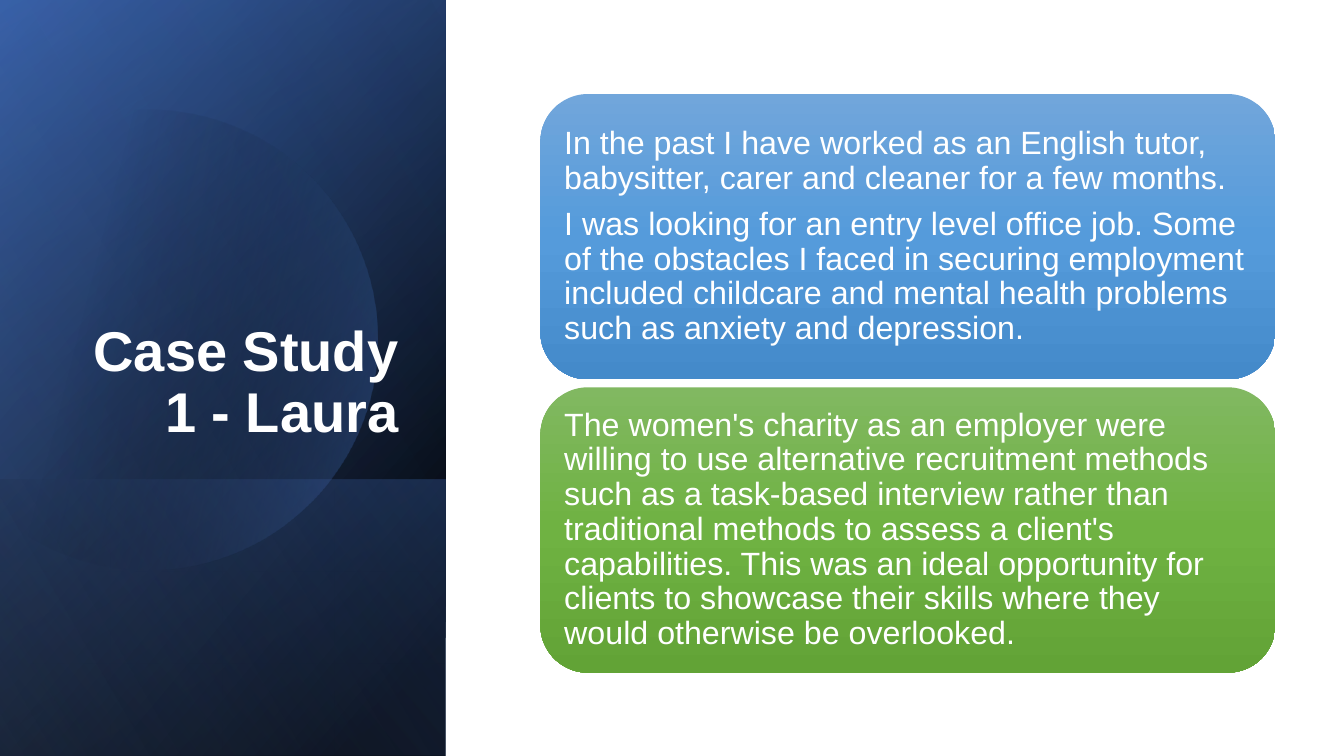
from math import cos, radians, sin

from lxml import etree
from pptx import Presentation
from pptx.dml.color import RGBColor
from pptx.enum.shapes import MSO_SHAPE
from pptx.enum.text import MSO_ANCHOR, MSO_AUTO_SIZE, PP_ALIGN
from pptx.oxml.ns import qn
from pptx.util import Cm, Pt

RECTANGLE = MSO_SHAPE.RECTANGLE
ROUNDED_RECTANGLE = MSO_SHAPE.ROUNDED_RECTANGLE
ANCHOR_BOTTOM, ANCHOR_MIDDLE = MSO_ANCHOR.BOTTOM, MSO_ANCHOR.MIDDLE
NO_AUTOFIT = MSO_AUTO_SIZE.NONE
ALIGN_LEFT, ALIGN_RIGHT = PP_ALIGN.LEFT, PP_ALIGN.RIGHT
TITLE_ONLY = 5

FONT = "Arial"
WHITE, BLACK = "FFFFFF", "000000"
BLUE, DARK_BLUE, PALE_BLUE = "4472C4", "2F5597", "8FAADC"

CARDS = [
    (["71A6DB", "559BDB", "448ACA"], [
        "In the past I have worked as an English tutor, babysitter, carer and cleaner "
        "for a few months.",
        "I was looking for an entry level office job. Some of the obstacles I faced in "
        "securing employment included childcare and mental health problems such as "
        "anxiety and depression.",
    ]),
    (["81B861", "6FB242", "62A336"], [
        "The women's charity as an employer were willing to use alternative recruitment "
        "methods such as a task-based interview rather than traditional methods to "
        "assess a client's capabilities. This was an ideal opportunity for clients to "
        "showcase their skills where they would otherwise be overlooked.",
    ]),
]


def color(value):
    """Turn a hex string into a colour."""
    return RGBColor.from_string(value)


def fill_gradient(shape, stops, angle):
    """Fill an unlined shape from (position, colour, opacity) stops in percent."""
    shape.shadow.inherit = False
    shape.line.fill.background()
    properties = shape.element.spPr
    gradient = etree.Element(qn("a:gradFill"), rotWithShape="1")
    stop_list = etree.SubElement(gradient, qn("a:gsLst"))
    for position, value, opacity in stops:
        stop = etree.SubElement(stop_list, qn("a:gs"), pos=str(position * 1000))
        stop_color = etree.SubElement(stop, qn("a:srgbClr"), val=value)
        if opacity < 100:
            etree.SubElement(stop_color, qn("a:alpha"), val=str(opacity * 1000))
    etree.SubElement(gradient, qn("a:lin"), ang=str(angle * 60000), scaled="0")
    properties.find(qn("a:ln")).addprevious(gradient)


def add_text(paragraph, text, size, alignment, bold=False):
    """Write one white run into a paragraph."""
    paragraph.alignment = alignment
    paragraph.line_spacing = 0.9
    run = paragraph.add_run()
    run.text = text
    run.font.name = FONT
    run.font.size = Pt(size)
    run.font.bold = bold
    run.font.color.rgb = color(WHITE)


def add_panel_layer(slide, left, top, width, height, stops, angle):
    """Cover a box with a mirrored rectangle turned by a quarter."""
    layer = slide.shapes.add_shape(
        RECTANGLE, Cm(left + (width - height) / 2), Cm(top + (height - width) / 2),
        Cm(height), Cm(width))
    layer.rotation = 90
    layer.element.spPr.find(qn("a:xfrm")).set("flipH", "1")
    fill_gradient(layer, stops, angle)


def add_cut_circle(slide, center_x, center_y, radius):
    """Draw a circle whose left side is cut off at the slide edge."""
    points = [(Cm(center_x + radius * cos(radians(degree))),
               Cm(center_y + radius * sin(radians(degree))))
              for degree in range(-135, 136, 3)]
    builder = slide.shapes.build_freeform(*points[0])
    builder.add_line_segments(points[1:], close=True)
    fill_gradient(builder.convert_to_shape(), [(29, BLACK, 0), (100, BLUE, 43)], 14)


def add_title_panel(slide, left, top, width, height):
    """Build the dark panel with its circle and the slide title."""
    box = (left, top, width, height)
    band = 6.96
    add_panel_layer(slide, *box, [(8, BLACK, 100), (100, DARK_BLUE, 100)], 50)
    add_panel_layer(slide, *box, [(0, BLACK, 0), (99, BLUE, 46)], 30)
    add_panel_layer(slide, left, top + height - band, width, band,
                    [(2, BLUE, 29), (100, BLACK, 30)], 130)
    add_cut_circle(slide, left + 3.73, top + 8.56, 5.79)
    add_panel_layer(slide, *box, [(0, BLACK, 0), (99, PALE_BLUE, 11)], 120)

    title = slide.shapes.title
    title.element.getparent().append(title.element)
    title.left, title.top = Cm(left + 1.63), Cm(top + 4.67)
    title.width, title.height = Cm(width - 2.57), Cm(6.65)
    frame = title.text_frame
    frame.word_wrap = True
    frame.auto_size = NO_AUTOFIT
    frame.vertical_anchor = ANCHOR_BOTTOM
    add_text(frame.paragraphs[0], "Case Study 1 - Laura", 40, ALIGN_RIGHT, bold=True)


def add_card(slide, left, top, width, height, shades, texts):
    """Build one rounded card with its paragraphs."""
    card = slide.shapes.add_shape(
        ROUNDED_RECTANGLE, Cm(left), Cm(top), Cm(width), Cm(height))
    fill_gradient(card, [(50 * index, shade, 100) for index, shade in enumerate(shades)], 90)
    frame = card.text_frame
    frame.word_wrap = True
    frame.vertical_anchor = ANCHOR_MIDDLE
    frame.margin_left = frame.margin_right = Cm(0.25)
    frame.margin_top = frame.margin_bottom = Cm(0.25)
    for index, text in enumerate(texts):
        paragraph = frame.add_paragraph() if index else frame.paragraphs[0]
        paragraph.space_after = Pt(8)
        add_text(paragraph, text, 23, ALIGN_LEFT)


def add_cards(slide, left, top, width, height, gap):
    """Stack the cards evenly in a box."""
    card_height = (height - gap * (len(CARDS) - 1)) / len(CARDS)
    for index, (shades, texts) in enumerate(CARDS):
        card_top = top + index * (card_height + gap)
        add_card(slide, left, card_top, width, card_height, shades, texts)


def main():
    """Build and save the case study slide."""
    presentation = Presentation()
    presentation.slide_width, presentation.slide_height = Cm(33.87), Cm(19.05)
    slide = presentation.slides.add_slide(presentation.slide_layouts[TITLE_ONLY])
    add_title_panel(slide, 0, 0, 11.23, 19.05)
    add_cards(slide, 13.62, 2.37, 18.52, 14.58, 0.2)
    presentation.save("out.pptx")


if __name__ == "__main__":
    main()
